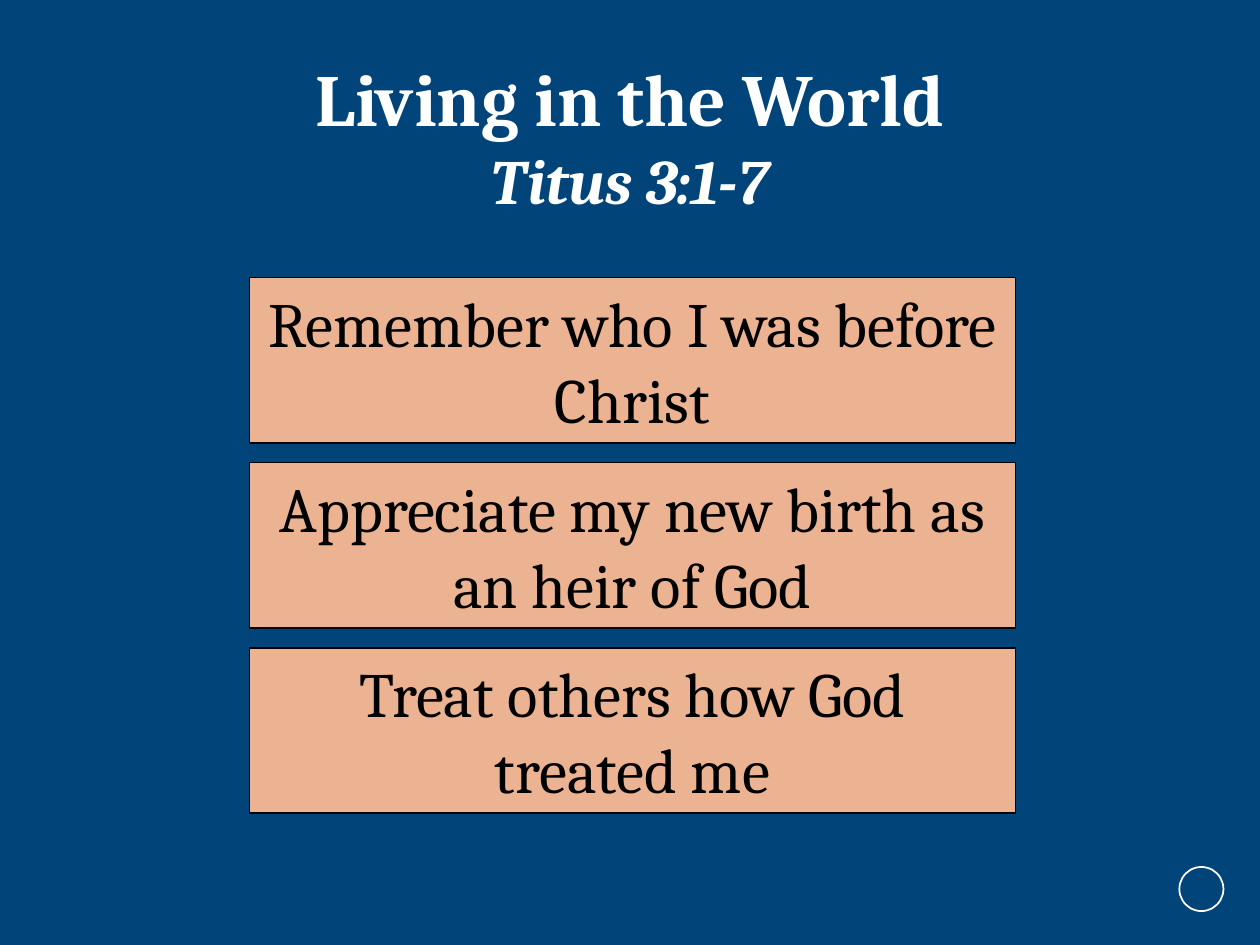
import pptx
import pptx.util
import pptx.dml.color
import pptx.enum.shapes
import pptx.enum.text

Pt = pptx.util.Pt
RGBColor = pptx.dml.color.RGBColor
SHAPES = pptx.enum.shapes.MSO_SHAPE
CENTER = pptx.enum.text.PP_ALIGN.CENTER
MIDDLE = pptx.enum.text.MSO_ANCHOR.MIDDLE
AUTO_SIZE = pptx.enum.text.MSO_AUTO_SIZE

TITLE_RUNS = [
    ("Living in the World", "title"),
    ("Titus 3:1-7", "reference"),
]
POINTS = [
    "Remember who I was before Christ",
    "Appreciate my new birth as an heir of God",
    "Treat others how God treated me",
]

THEME = {
    "background": RGBColor(0x00, 0x44, 0x79),
    "box": RGBColor(0xEB, 0xB3, 0x91),
    "dark": RGBColor(0, 0, 0),
    "light": RGBColor(255, 255, 255),
    "line": Pt(1),
    "title": {"name": "Cambria", "size": Pt(42), "bold": True, "italic": False},
    "reference": {"name": "Cambria", "size": Pt(36), "bold": True, "italic": True},
    "point": {"name": "Cambria", "size": Pt(36), "bold": False, "italic": False},
}

SLIDE_WIDTH, SLIDE_HEIGHT = 720, 540
TITLE_BOX = (54, 25.2, 612, 103.7)
RING_BOX = (673.9, 495.4, 25.2, 25.2)
BOX_LEFT, BOX_TOP, BOX_WIDTH, BOX_HEIGHT = 142.5, 158.6, 437.8, 94.5
BOX_GAP = 11.3


def format_font(font, style, color):
    for attribute, value in THEME[style].items():
        setattr(font, attribute, value)
    font.color.rgb = THEME[color]


def format_frame(frame, auto_size):
    settings = {"word_wrap": True, "vertical_anchor": MIDDLE, "auto_size": auto_size}
    for attribute, value in settings.items():
        setattr(frame, attribute, value)
    frame.paragraphs[0].alignment = CENTER
    return frame.paragraphs[0]


def add_outlined_shape(slide, kind, box, line_color):
    shape = slide.shapes.add_shape(kind, *map(Pt, box))
    shape.shadow.inherit = False
    shape.line.color.rgb = THEME[line_color]
    shape.line.width = THEME["line"]
    return shape


def fill_title(slide):
    title = slide.shapes.title
    for attribute, value in zip(("left", "top", "width", "height"), TITLE_BOX):
        setattr(title, attribute, Pt(value))
    paragraph = format_frame(title.text_frame, AUTO_SIZE.NONE)
    for index, (text, style) in enumerate(TITLE_RUNS):
        if index:
            paragraph.add_line_break()
        run = paragraph.add_run()
        run.text = text
        format_font(run.font, style, "light")


def add_points(slide):
    for index, text in enumerate(POINTS):
        top = BOX_TOP + index * (BOX_HEIGHT + BOX_GAP)
        box = (BOX_LEFT, top, BOX_WIDTH, BOX_HEIGHT)
        shape = add_outlined_shape(slide, SHAPES.RECTANGLE, box, "dark")
        shape.fill.solid()
        shape.fill.fore_color.rgb = THEME["box"]
        paragraph = format_frame(shape.text_frame, AUTO_SIZE.SHAPE_TO_FIT_TEXT)
        run = paragraph.add_run()
        run.text = text
        format_font(run.font, "point", "dark")


def main():
    presentation = pptx.Presentation()
    presentation.slide_width = Pt(SLIDE_WIDTH)
    presentation.slide_height = Pt(SLIDE_HEIGHT)
    slide = presentation.slides.add_slide(presentation.slide_layouts.get_by_name("Title Only"))
    slide.background.fill.solid()
    slide.background.fill.fore_color.rgb = THEME["background"]
    ring = add_outlined_shape(slide, SHAPES.OVAL, RING_BOX, "light")
    ring.fill.background()
    fill_title(slide)
    add_points(slide)
    presentation.save("out.pptx")


if __name__ == "__main__":
    main()
